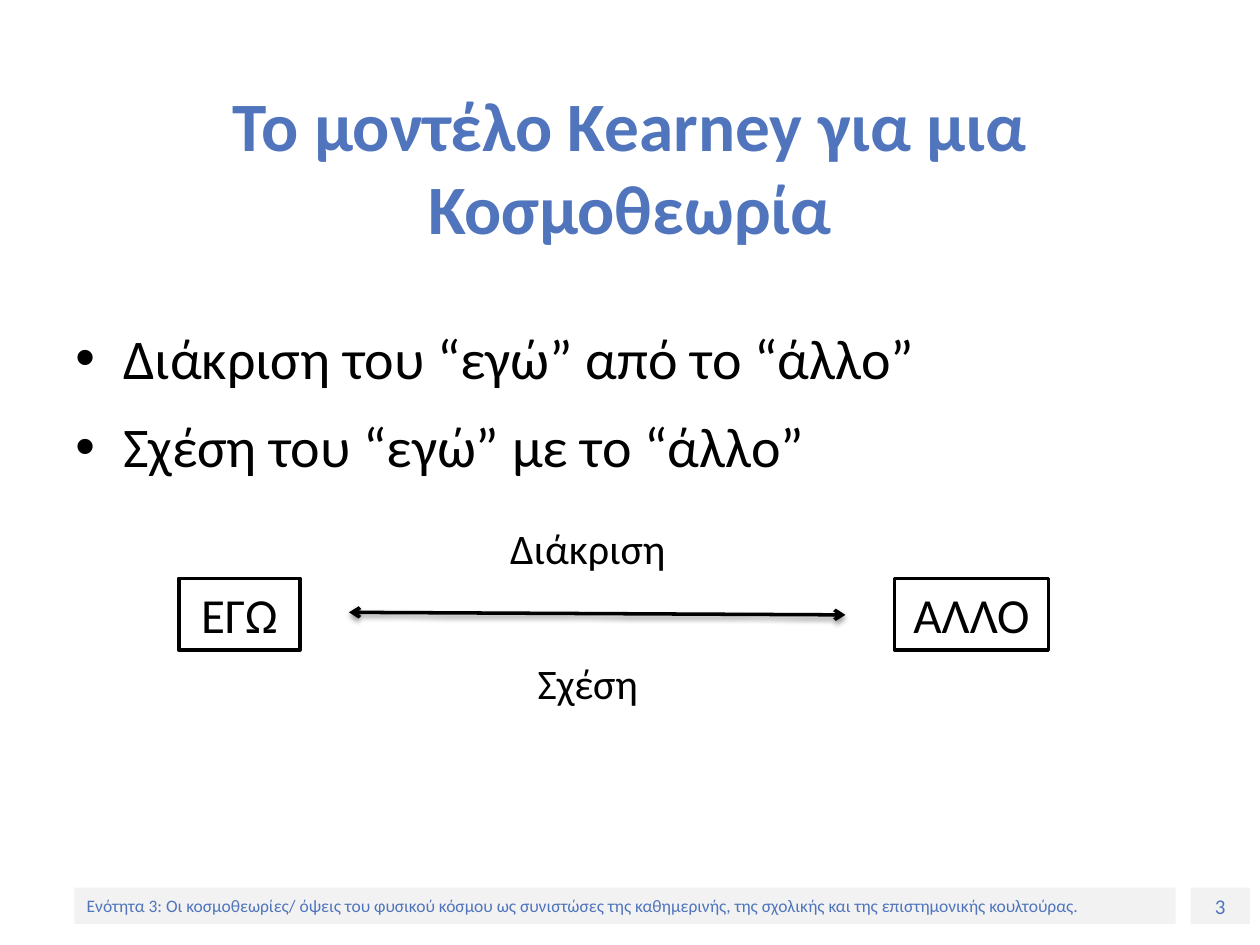
import lxml.etree
import pptx
import pptx.dml.color
import pptx.enum.shapes
import pptx.enum.text
import pptx.oxml
import pptx.oxml.ns
import pptx.util

COLORS = {"blue": "5075BC", "black": "000000", "gray": "F2F2F2"}
RGB = pptx.dml.color.RGBColor.from_string
ALIGN = pptx.enum.text.PP_ALIGN
ANCHOR = pptx.enum.text.MSO_ANCHOR
RECT = pptx.enum.shapes.MSO_SHAPE.RECTANGLE
qn = pptx.oxml.ns.qn

prs = pptx.Presentation()
prs.slide_width = pptx.util.Inches(10)
prs.slide_height = pptx.util.Inches(7.5)
slide = prs.slides.add_slide(prs.slide_layouts[5])
col = prs.slide_width / 100
row = prs.slide_height / 75


def grid(left, top, width, height):
    """Turn columns and rows of the 100 by 75 grid into slide lengths."""
    return [round(v) for v in (left * col, top * row, width * col, height * row)]


def write(sp, *lines, size, color="black", bold=False, align=ALIGN.CENTER,
          anchor=ANCHOR.TOP, bullet=False):
    """Fill a shape with one paragraph per line."""
    tf = sp.text_frame
    tf.word_wrap = True
    tf.auto_size = pptx.enum.text.MSO_AUTO_SIZE.NONE
    tf.vertical_anchor = anchor
    for i, line in enumerate(lines):
        p = tf.add_paragraph() if i else tf.paragraphs[0]
        p.alignment = align
        if bullet:
            p.space_before = pptx.util.Pt(12 if i else 0)
            pPr = p._p.get_or_add_pPr()
            indent = pptx.util.Inches(0.38)
            pPr.set("marL", str(indent))
            pPr.set("indent", str(-indent))
            lxml.etree.SubElement(pPr, qn("a:buFont"), typeface="Arial")
            lxml.etree.SubElement(pPr, qn("a:buChar"), char="•")
        r = p.add_run()
        r.text = line
        r.font.name = "Calibri"
        r.font.size = pptx.util.Pt(size)
        r.font.bold = bold
        r.font.color.rgb = RGB(COLORS[color])


# Footer bar and page number
footer = "Ενότητα 3: Οι κοσμοθεωρίες/ όψεις του φυσικού κόσμου ως συνιστώσες της καθημερινής, της σχολικής και της επιστημονικής κουλτούρας."
for text, left, width, size, align in (
    ("3", 94.5, 4.7, 12, ALIGN.CENTER),
    (footer, 5.9, 87.4, 10, ALIGN.LEFT),
):
    sp = slide.shapes.add_shape(RECT, *grid(left, 70.45, width, 2.9))
    sp.shadow.inherit = False
    sp.fill.solid()
    sp.fill.fore_color.rgb = RGB(COLORS["gray"])
    sp.line.fill.background()
    write(sp, text, size=size, color="blue", align=align, anchor=ANCHOR.MIDDLE)

# Title and bullets
title = slide.shapes.title
title.left, title.top, title.width, title.height = grid(5, 6.9, 90, 12.5)
write(title, "Το μοντέλο Kearney για μια Κοσμοθεωρία", size=39.6, color="blue",
      bold=True, anchor=ANCHOR.MIDDLE)

body = slide.shapes.add_textbox(*grid(5, 25.2, 90, 15.5))
write(body, "Διάκριση του “εγώ” από το “άλλο”", "Σχέση του “εγώ” με το “άλλο”",
      size=32, align=ALIGN.LEFT, bullet=True)

# Diagram: two poles, the arrow between them, and its labels
for text, left, width in (("ΕΓΩ", 14.2, 9.6), ("ΑΛΛΟ", 71, 12.2)):
    sp = slide.shapes.add_shape(RECT, *grid(left, 45.9, width, 5.7))
    sp.shadow.inherit = False
    sp.fill.background()
    sp.line.color.rgb = RGB(COLORS["black"])
    sp.line.width = pptx.util.Pt(2)
    write(sp, text, size=28)

arrow = slide.shapes.add_connector(
    pptx.enum.shapes.MSO_CONNECTOR.STRAIGHT, *grid(27.7, 48.6, 67.1, 48.8))
arrow.line.color.rgb = RGB(COLORS["black"])
arrow.line.width = pptx.util.Pt(2)
ln = arrow.line._get_or_add_ln()
for end in ("a:headEnd", "a:tailEnd"):
    lxml.etree.SubElement(ln, qn(end), type="arrow")
effects = lxml.etree.SubElement(arrow._element.spPr, qn("a:effectLst"))
shadow = lxml.etree.SubElement(
    effects, qn("a:outerShdw"), blurRad=str(pptx.util.Pt(3.1)),
    dist=str(pptx.util.Pt(1.6)), dir=str(90 * 60000), rotWithShape="0")
shade = lxml.etree.SubElement(shadow, qn("a:srgbClr"), val=COLORS["black"])
lxml.etree.SubElement(shade, qn("a:alpha"), val="38000")

for text, top in (("Διάκριση", 41), ("Σχέση", 51.7)):
    write(slide.shapes.add_textbox(*grid(37.4, top, 18.5, 5)), text, size=24)

prs.save("out.pptx")
